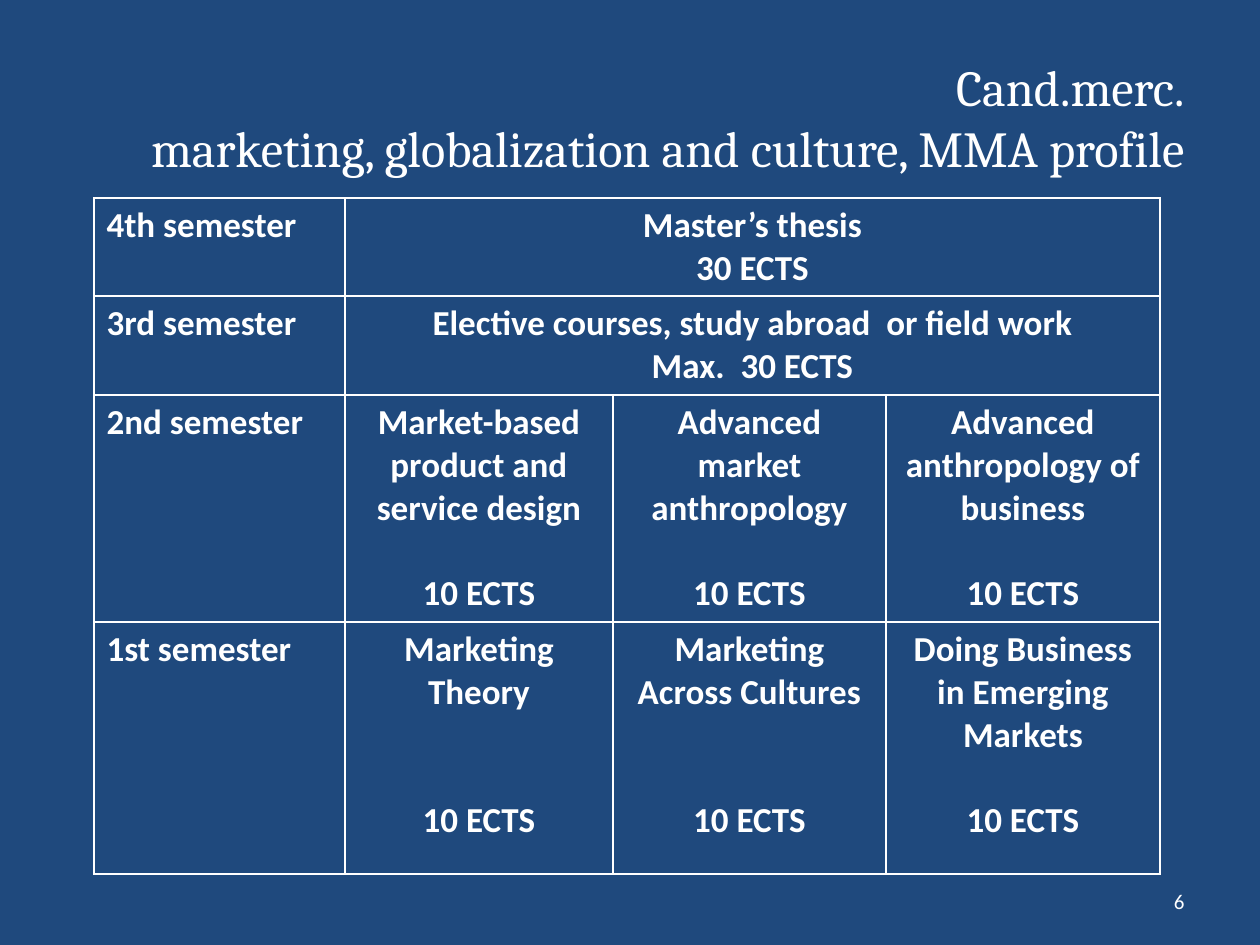
from dataclasses import dataclass

from lxml.etree import SubElement
from pptx import Presentation
from pptx.dml.color import RGBColor
from pptx.enum.text import MSO_ANCHOR, PP_ALIGN
from pptx.oxml.ns import qn
from pptx.util import Emu, Pt

EMU_PER_PX = 914400 / 126


def px(length):
    return Emu(round(length * EMU_PER_PX))


@dataclass(frozen=True)
class Theme:
    navy: str = "1F497D"
    white: str = "FFFFFF"
    title_font: str = "Cambria"
    body_font: str = "Calibri"
    title_size: float = 28.8
    table_size: float = 20
    number_size: float = 12
    table_line: float = 24.4
    border_width: float = 1


class SlideBuilder:
    def __init__(self, slide, theme):
        self.slide = slide
        self.theme = theme

    def background(self):
        fill = self.slide.background.fill
        fill.solid()
        fill.fore_color.rgb = RGBColor.from_string(self.theme.navy)

    def style(self, paragraph, font_name, size, align, bold=False):
        paragraph.alignment = align
        font = paragraph.font
        font.name, font.size, font.bold = font_name, Pt(size), bold
        font.color.rgb = RGBColor.from_string(self.theme.white)

    def text(self, content, left, top, width, height, font_name, size):
        box = self.slide.shapes.add_textbox(px(left), px(top), px(width), px(height))
        frame = box.text_frame
        frame.word_wrap = True
        frame.vertical_anchor = MSO_ANCHOR.MIDDLE
        paragraph = frame.paragraphs[0]
        paragraph.text = content
        self.style(paragraph, font_name, size, PP_ALIGN.RIGHT)

    def borders(self, cell):
        properties = cell._tc.get_or_add_tcPr()
        for side in ("a:lnL", "a:lnR", "a:lnT", "a:lnB"):
            line = SubElement(properties, qn(side), w=str(Pt(self.theme.border_width)))
            fill = SubElement(line, qn("a:solidFill"))
            SubElement(fill, qn("a:srgbClr"), val=self.theme.white)

    def cell_text(self, cell, lines, align, gap_lines=0):
        frame = cell.text_frame
        for index, line in enumerate(lines):
            paragraph = frame.add_paragraph() if index else frame.paragraphs[0]
            paragraph.text = line
            if index and gap_lines:
                paragraph.space_before = Pt(gap_lines * self.theme.table_line)
            self.style(paragraph, self.theme.body_font, self.theme.table_size, align, bold=True)

    def table(self, semesters, left, top, widths, heights):
        table = self.slide.shapes.add_table(
            len(heights), len(widths), px(left), px(top), px(sum(widths)), px(sum(heights))
        ).table
        table.first_row = table.horz_banding = False
        for column, width in zip(table.columns, widths):
            column.width = px(width)
        for row, height in zip(table.rows, heights):
            row.height = px(height)
        for cell in table.iter_cells():
            self.borders(cell)
            cell.fill.background()

        for row, (semester, courses) in enumerate(semesters):
            self.cell_text(table.cell(row, 0), [semester], PP_ALIGN.LEFT)
            if len(courses) == 1:
                table.cell(row, 1).merge(table.cell(row, len(widths) - 1))
            for column, (course, credits, gap_lines) in enumerate(courses, start=1):
                self.cell_text(table.cell(row, column), [course, credits], PP_ALIGN.CENTER, gap_lines)


# Each course: name, credits, lines left open between them
SEMESTERS = [
    ("4th semester", [("Master’s thesis", "30 ECTS", 0)]),
    ("3rd semester", [("Elective courses, study abroad  or field work", "Max.  30 ECTS", 0)]),
    ("2nd semester", [
        ("Market-based product and service design", "10 ECTS", 1),
        ("Advanced market anthropology", "10 ECTS", 1),
        ("Advanced anthropology of business", "10 ECTS", 1),
    ]),
    ("1st semester", [
        ("Marketing Theory", "10 ECTS", 2),
        ("Marketing Across Cultures", "10 ECTS", 2),
        ("Doing Business in Emerging Markets", "10 ECTS", 1),
    ]),
]


def main():
    presentation = Presentation()
    presentation.slide_width, presentation.slide_height = px(1260), px(945)
    theme = Theme()
    builder = SlideBuilder(presentation.slides.add_slide(presentation.slide_layouts[6]), theme)
    builder.background()

    # Title
    builder.text("Cand.merc.\vmarketing, globalization and culture, MMA profile",
                 63, 38, 1134, 158, theme.title_font, theme.title_size)

    # Study plan, latest semester first
    builder.table(SEMESTERS, 94, 198, widths=[251, 268, 273, 274], heights=[98, 99, 227, 252])

    # Slide number
    builder.text("6", 903, 876, 294, 50, theme.body_font, theme.number_size)

    presentation.save("out.pptx")


if __name__ == "__main__":
    main()
